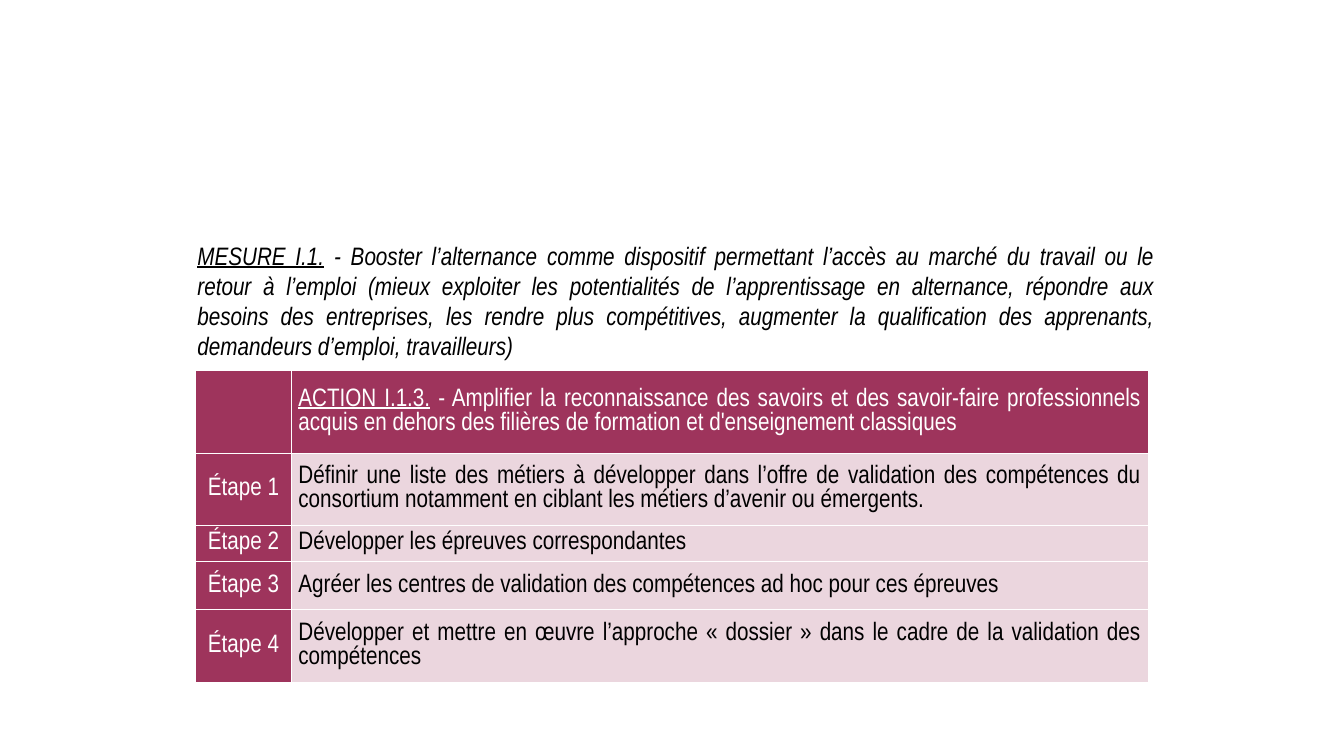
from lxml.etree import SubElement
from pptx import Presentation
from pptx.dml.color import RGBColor
from pptx.enum.text import MSO_ANCHOR, MSO_AUTO_SIZE, PP_ALIGN
from pptx.oxml.ns import qn
from pptx.util import Inches, Pt

BURGUNDY = RGBColor(0x9E, 0x34, 0x5C)
WHITE = RGBColor(0xFF, 0xFF, 0xFF)
BLACK = RGBColor(0, 0, 0)
FONT_NAME = "Arial Narrow"
PALE_OPACITY = 20

MEASURE = (
    "MESURE I.1.",
    " - Booster l’alternance comme dispositif permettant l’accès au marché du travail "
    "ou le retour à l’emploi (mieux exploiter les potentialités de l’apprentissage en "
    "alternance, répondre aux besoins des entreprises, les rendre plus compétitives, "
    "augmenter la qualification des apprenants, demandeurs d’emploi, travailleurs)",
)
ACTION = (
    "ACTION I.1.3.",
    " - Amplifier la reconnaissance des savoirs et des savoir-faire professionnels "
    "acquis en dehors des filières de formation et d'enseignement classiques",
)
STEPS = [
    "Définir une liste des métiers à développer dans l’offre de validation des "
    "compétences du consortium notamment en ciblant les métiers d’avenir ou émergents.",
    "Développer les épreuves correspondantes",
    "Agréer les centres de validation des compétences ad hoc pour ces épreuves",
    "Développer et mettre en œuvre l’approche « dossier » dans le cadre de la "
    "validation des compétences",
]
COLUMN_WIDTHS = [0.95, 8.5]
ROW_HEIGHTS = [0.83, 0.71, 0.36, 0.48, 0.72]


def write_paragraph(paragraph, text, color, alignment=PP_ALIGN.JUSTIFY,
                    heading="", italic=False):
    """Write an underlined heading, if any, followed by plain text."""
    paragraph.alignment = alignment
    for part, underline in ((heading, True), (text, False)):
        if not part:
            continue
        run = paragraph.add_run()
        run.text = part
        formats = {"name": FONT_NAME, "size": Pt(18), "bold": False,
                   "italic": italic, "underline": underline}
        for attribute, value in formats.items():
            setattr(run.font, attribute, value)
        run.font.color.rgb = color


def add_measure(slide):
    box = slide.shapes.add_textbox(Inches(1.86), Inches(2.33), Inches(9.69), Inches(1.31))
    frame = box.text_frame
    frame.word_wrap = True
    frame.auto_size = MSO_AUTO_SIZE.SHAPE_TO_FIT_TEXT
    heading, text = MEASURE
    write_paragraph(frame.paragraphs[0], text, BLACK, heading=heading, italic=True)


def set_borders(cell):
    properties = cell._tc.get_or_add_tcPr()
    for side in ("lnL", "lnR", "lnT", "lnB"):
        line = SubElement(properties, qn(f"a:{side}"), w=str(Pt(1)))
        fill = SubElement(line, qn("a:solidFill"))
        SubElement(fill, qn("a:srgbClr"), val=str(WHITE))


def format_cell(cell, pale=False):
    formats = {"vertical_anchor": MSO_ANCHOR.MIDDLE,
               "margin_left": Inches(0.07), "margin_right": Inches(0.07),
               "margin_top": 0, "margin_bottom": 0}
    for attribute, value in formats.items():
        setattr(cell, attribute, value)
    set_borders(cell)
    cell.fill.solid()
    cell.fill.fore_color.rgb = BURGUNDY
    if pale:
        color = cell._tc.tcPr.find(qn("a:solidFill")).find(qn("a:srgbClr"))
        SubElement(color, qn("a:alpha"), val=str(PALE_OPACITY * 1000))


def write_cell(cell, text, color, **options):
    write_paragraph(cell.text_frame.paragraphs[0], text, color, **options)


def add_action_table(slide):
    table = slide.shapes.add_table(
        len(ROW_HEIGHTS), len(COLUMN_WIDTHS), Inches(1.94), Inches(3.67),
        Inches(sum(COLUMN_WIDTHS)), Inches(sum(ROW_HEIGHTS))).table
    table.horz_banding = False
    for column, width in zip(table.columns, COLUMN_WIDTHS):
        column.width = Inches(width)
    for row, height in zip(table.rows, ROW_HEIGHTS):
        row.height = Inches(height)

    format_cell(table.cell(0, 0))
    format_cell(table.cell(0, 1))
    heading, text = ACTION
    write_cell(table.cell(0, 1), text, WHITE, heading=heading)
    for number, step in enumerate(STEPS, start=1):
        label, description = table.cell(number, 0), table.cell(number, 1)
        format_cell(label)
        write_cell(label, f"Étape {number}", WHITE, alignment=PP_ALIGN.CENTER)
        format_cell(description, pale=True)
        write_cell(description, step, BLACK)


def main():
    presentation = Presentation()
    presentation.slide_width = Inches(13.33)
    presentation.slide_height = Inches(7.5)
    slide = presentation.slides.add_slide(presentation.slide_layouts[6])
    add_measure(slide)
    add_action_table(slide)
    presentation.save("out.pptx")


if __name__ == "__main__":
    main()
